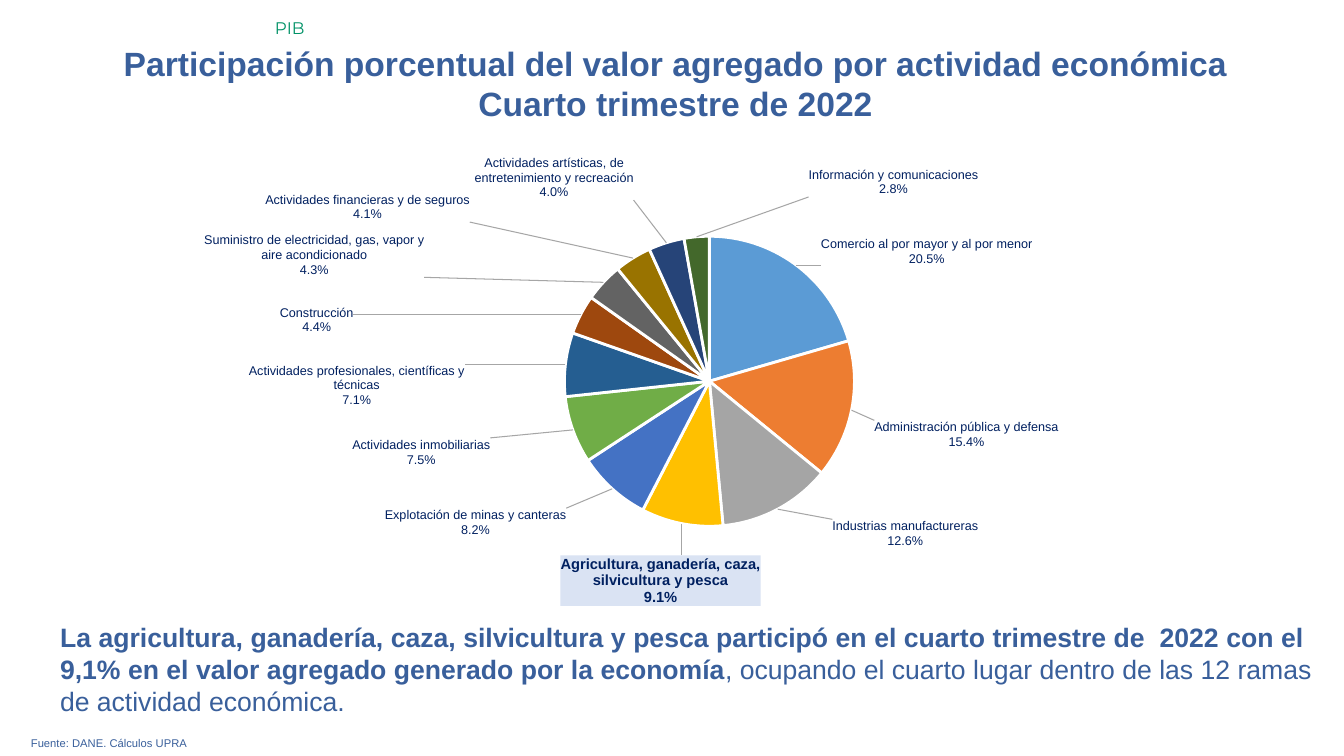
from lxml import etree
from pptx import Presentation
from pptx.chart.data import CategoryChartData
from pptx.dml.color import RGBColor
from pptx.enum.chart import XL_CHART_TYPE as ChartType, XL_LABEL_POSITION as LabelPosition
from pptx.enum.text import MSO_ANCHOR as Anchor, MSO_AUTO_SIZE as AutoSize, PP_ALIGN as Align
from pptx.oxml import parse_xml
from pptx.oxml.ns import nsdecls, qn
from pptx.util import Emu, Pt

PX = 9525 * 96 / 100.8
BLUE, NAVY, GREEN, WHITE = "395F9B", "002060", "009267", "FFFFFF"
HIGHLIGHTED = 3

# Activity, share, colour, shift of the label from the edge of its slice
ACTIVITIES = [
    ("Comercio al por mayor y al por menor", 20.5, "5B9BD5", 21, 6),
    ("Administración pública y defensa", 15.4, "ED7D31", 17, 9),
    ("Industrias manufactureras", 12.6, "A5A5A5", 52, 5),
    ("Agricultura, ganadería, caza, silvicultura y pesca", 9.1, "FFC000", 80, 26),
    ("Explotación de minas y canteras", 8.2, "4472C4", -42, 15),
    ("Actividades inmobiliarias", 7.5, "70AD47", -77, 6),
    ("Actividades profesionales, científicas y técnicas", 7.1, "255E91", -95, 44),
    ("Construcción", 4.4, "9E480E", -222, 23),
    ("Suministro de electricidad, gas, vapor y aire acondicionado", 4.3, "636363", -175, -1),
    ("Actividades financieras y de seguros", 4.1, "997300", -160, -31),
    ("Actividades artísticas, de entretenimiento y recreación", 4.0, "264478", -31, -37),
    ("Información y comunicaciones", 2.8, "43682B", 282, -34),
]


def px(length):
    """Turn pixels into EMU."""
    return Emu(round(length * PX))


def color(value):
    """Turn a hex string into a colour."""
    return RGBColor.from_string(value)


def place(shape, left, top, width, height):
    """Move and size a shape."""
    shape.left, shape.top = px(left), px(top)
    shape.width, shape.height = px(width), px(height)


def style(font, size, hue, bold=False, name="Arial"):
    """Set the look of a font."""
    font.name, font.size, font.bold = name, Pt(size), bold
    font.color.rgb = color(hue)


def write(shape, text, align, size, hue, bold=False, name="Arial"):
    """Fill a shape with paragraphs of one style."""
    frame = shape.text_frame
    frame.text = text
    frame.word_wrap, frame.auto_size = True, AutoSize.NONE
    frame.vertical_anchor = Anchor.TOP
    for para in frame.paragraphs:
        para.alignment, para.space_before = align, Pt(0)
        for span in para.runs:
            style(span.font, size, hue, bold, name)


def add_label_box(page, text, area, align, size, hue, name="Arial"):
    """Add a text box."""
    box = page.shapes.add_textbox(*map(px, area))
    write(box, text, align, size, hue, name=name)


def add_conclusion(body):
    """Write the closing paragraph with its bold first part."""
    place(body, 0, 616, 1322, 107)
    write(body, "La agricultura, ganadería, caza, silvicultura y pesca participó en el cuarto "
          "trimestre de  2022 con el  9,1% en el valor agregado generado por la economía",
          Align.JUSTIFY, 19, BLUE, True)
    para = body.text_frame.paragraphs[0]
    settings = para._p.get_or_add_pPr()
    settings.set("marL", str(px(50)))
    settings.set("indent", "0")
    etree.SubElement(settings, qn("a:buNone"))
    span = para.add_run()
    span.text = ", ocupando el cuarto lugar dentro de las 12 ramas de actividad económica."
    style(span.font, 19, BLUE)


def manual_layout(target, **parts):
    """Return a manual layout element for a plot or a label."""
    fields = "".join(f'<c:{key} val="{value}"/>' for key, value in parts.items())
    start = f'<c:layoutTarget val="{target}"/>' if target else ""
    return parse_xml(f'<c:layout {nsdecls("c")}><c:manualLayout>{start}{fields}'
                     '</c:manualLayout></c:layout>')


def moved_label(index, dx, dy, width, height):
    """Return a label shifted from the edge of its slice."""
    strong = index == HIGHLIGHTED
    size, bold = (1050, 1) if strong else (900, 0)
    fill = '<a:solidFill><a:srgbClr val="DAE3F3"/></a:solidFill>' if strong else "<a:noFill/>"
    label = parse_xml(
        f'<c:dLbl {nsdecls("c", "a")}><c:idx val="{index}"/>'
        '<c:numFmt formatCode="0.0%" sourceLinked="0"/>'
        f'<c:spPr>{fill}<a:ln><a:noFill/></a:ln></c:spPr>'
        f'<c:txPr><a:bodyPr/><a:p><a:pPr><a:defRPr sz="{size}" b="{bold}">'
        f'<a:solidFill><a:srgbClr val="{NAVY}"/></a:solidFill><a:latin typeface="Arial"/>'
        '</a:defRPr></a:pPr><a:endParaRPr lang="es-CO"/></a:p></c:txPr>'
        '<c:dLblPos val="outEnd"/><c:showLegendKey val="0"/><c:showVal val="0"/>'
        '<c:showCatName val="1"/><c:showSerName val="0"/><c:showPercent val="1"/>'
        '<c:showBubbleSize val="0"/><c:separator>\n</c:separator></c:dLbl>')
    label.insert(1, manual_layout("", x=round(dx / width, 4), y=round(dy / height, 4)))
    return label


def add_labels(series, width, height):
    """Show category and share beside each slice, with leader lines."""
    labels = series.data_labels
    labels.show_value, labels.show_category_name, labels.show_percentage = False, True, True
    labels.number_format, labels.number_format_is_linked = "0.0%", False
    labels.position = LabelPosition.OUTSIDE_END
    style(labels.font, 9, NAVY)
    group = labels._element
    for old in group.findall(qn("c:showLeaderLines")):
        group.remove(old)
    group.append(parse_xml(f'<c:showLeaderLines {nsdecls("c")} val="1"/>'))
    group.append(parse_xml(
        f'<c:leaderLines {nsdecls("c", "a")}><c:spPr><a:ln w="9525"><a:solidFill>'
        '<a:srgbClr val="A6A6A6"/></a:solidFill></a:ln></c:spPr></c:leaderLines>'))
    for index, (*_, dx, dy) in enumerate(ACTIVITIES):
        group.insert(index, moved_label(index, dx, dy, width, height))


def add_pie(page, left, top, width, height):
    """Add the pie of shares by economic activity."""
    data = CategoryChartData(number_format="0.0")
    data.categories = [activity[0] for activity in ACTIVITIES]
    data.add_series("Series 1", [activity[1] for activity in ACTIVITIES])
    area = map(px, (left, top, width, height))
    chart = page.shapes.add_chart(ChartType.PIE, *area, data).chart
    chart.has_legend = chart.has_title = False
    style(chart.font, 9, NAVY)
    plot = chart.plots[0]
    plot.vary_by_categories = True
    series = plot.series[0]
    for index, activity in enumerate(ACTIVITIES):
        look = series.points[index].format
        look.fill.solid()
        look.fill.fore_color.rgb = color(activity[2])
        look.line.color.rgb = color(WHITE)
        look.line.width = Pt(2)
    add_labels(series, width, height)
    plot_area = chart._chartSpace.chart.plotArea
    for old in plot_area.findall(qn("c:layout")):
        plot_area.remove(old)
    plot_area.insert(0, manual_layout("inner", xMode="edge", yMode="edge",
                                      x=0.184, y=0.201, w=0.699, h=0.612))


def main():
    """Build the slide and save it."""
    deck = Presentation()
    deck.slide_width, deck.slide_height = px(1344), px(756)
    page = deck.slides.add_slide(deck.slide_layouts[1])
    title, body = page.placeholders
    place(title, 45, 38, 1261, 92)
    write(title, "Participación porcentual del valor agregado por actividad económica\n"
          "Cuarto trimestre de 2022", Align.CENTER, 24, BLUE, True)
    add_label_box(page, "Fuente: DANE. Cálculos UPRA", (21, 731, 1301, 24),
                  Align.JUSTIFY, 8, BLUE)
    add_conclusion(body)
    add_label_box(page, "PIB", (265, 13, 1079, 30), Align.LEFT, 12, GREEN, "Montserrat")
    add_pie(page, 112, 141, 1120, 474)
    deck.save("out.pptx")


if __name__ == "__main__":
    main()
